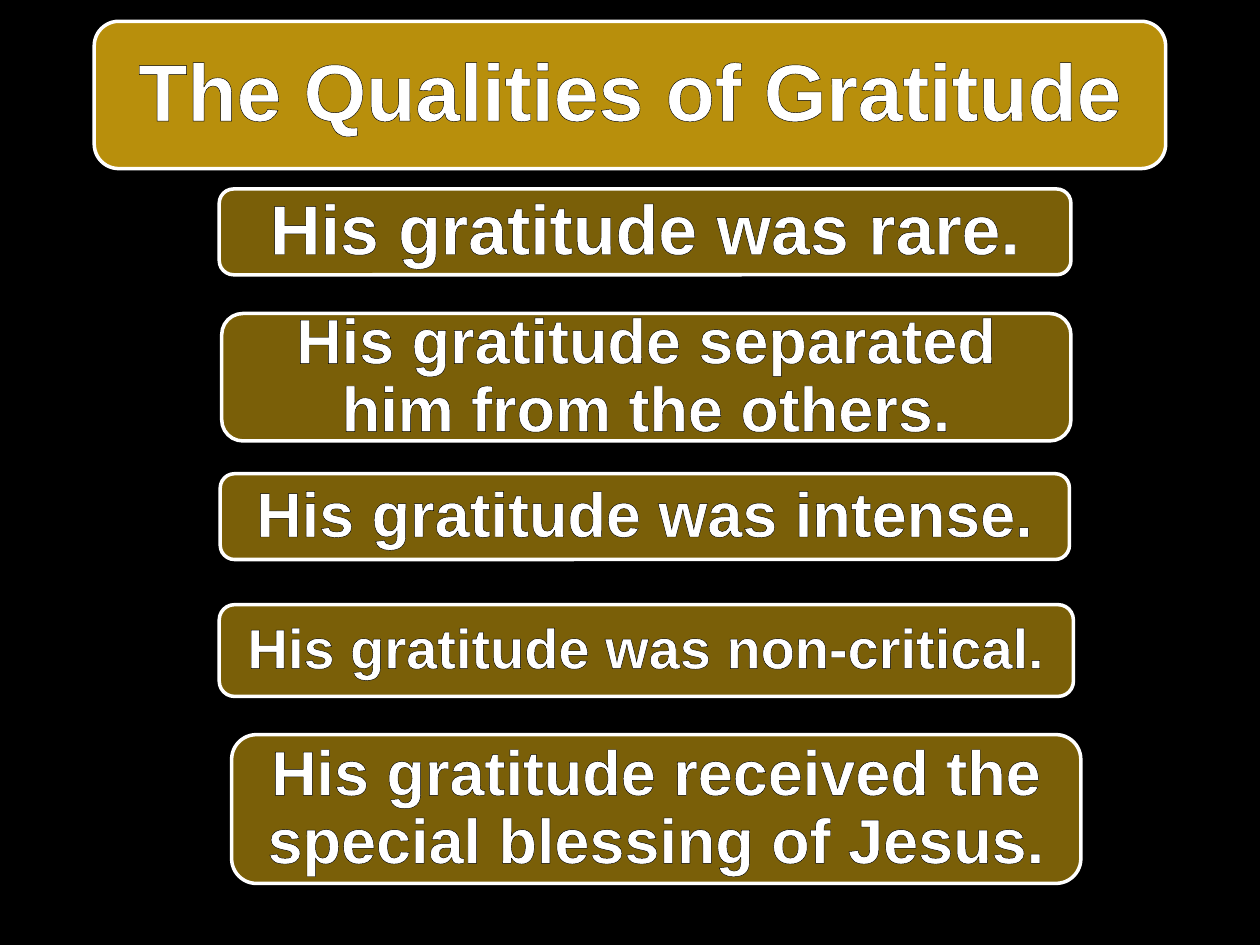
from lxml import etree
from pptx import Presentation
from pptx.dml.color import RGBColor
from pptx.enum import shapes, text
from pptx.oxml.ns import qn
from pptx.util import Cm, Pt

BLACK, WHITE = "000000", "FFFFFF"
GOLD, DARK_GOLD = "B88F0C", "7A5F08"

TITLE = "The Qualities of Gratitude"
# Wording, left, top, width, height (cm), text size
QUALITIES = [
    ("His gratitude was rare.", 4.42, 3.81, 17.17, 1.73, 40),
    ("His gratitude separated him from the others.", 4.47, 6.32, 17.12, 2.57, 36),
    ("His gratitude was intense.", 4.44, 9.55, 17.12, 1.73, 36),
    ("His gratitude was non-critical.", 4.42, 12.19, 17.22, 1.85, 32),
    ("His gratitude received the special blessing of Jesus.",
     4.67, 14.81, 17.12, 3, 36),
]


def paint(fill, color):
    fill.solid()
    fill.fore_color.rgb = RGBColor.from_string(color)


def outline_text(span, color, width):
    """Give the letters a thin outline; it must come first in the run properties."""
    line = etree.Element(qn("a:ln"), w=str(Pt(width)))
    solid = etree.SubElement(line, qn("a:solidFill"))
    etree.SubElement(solid, qn("a:srgbClr"), val=color)
    span.font._element.insert(0, line)


def write(box, wording, size, color=WHITE, outline=0.25, side=0.48, top=0):
    frame = box.text_frame
    frame.word_wrap = True
    frame.vertical_anchor = text.MSO_ANCHOR.MIDDLE
    frame.margin_left = frame.margin_right = Cm(side)
    frame.margin_top = frame.margin_bottom = Cm(top)
    para = frame.paragraphs[0]
    para.alignment = text.PP_ALIGN.CENTER
    para.line_spacing = 0.9
    span = para.add_run()
    span.text = wording
    span.font.name = "Arial"
    span.font.size = Pt(size)
    span.font.bold = True
    paint(span.font.fill, color)
    outline_text(span, BLACK, outline)


def add_panel(page, left, top, width, height, color):
    box = page.shapes.add_shape(
        shapes.MSO_SHAPE.ROUNDED_RECTANGLE,
        Cm(left), Cm(top), Cm(width), Cm(height))
    box.shadow.inherit = False
    paint(box.fill, color)
    paint(box.line.fill, WHITE)
    box.line.width = Pt(2)
    return box


def main():
    deck = Presentation()
    deck.slide_width, deck.slide_height = Cm(25.4), Cm(19.05)
    page = deck.slides.add_slide(deck.slide_layouts[6])
    paint(page.background.fill, BLACK)

    # Title panel
    title = add_panel(page, 1.9, 0.43, 21.6, 2.97, GOLD)
    write(title, TITLE, 46, outline=0.5, top=0.48)

    # One panel for each quality
    for wording, left, top, width, height, size in QUALITIES:
        panel = add_panel(page, left, top, width, height, DARK_GOLD)
        write(panel, wording, size)

    deck.save("out.pptx")


if __name__ == "__main__":
    main()
